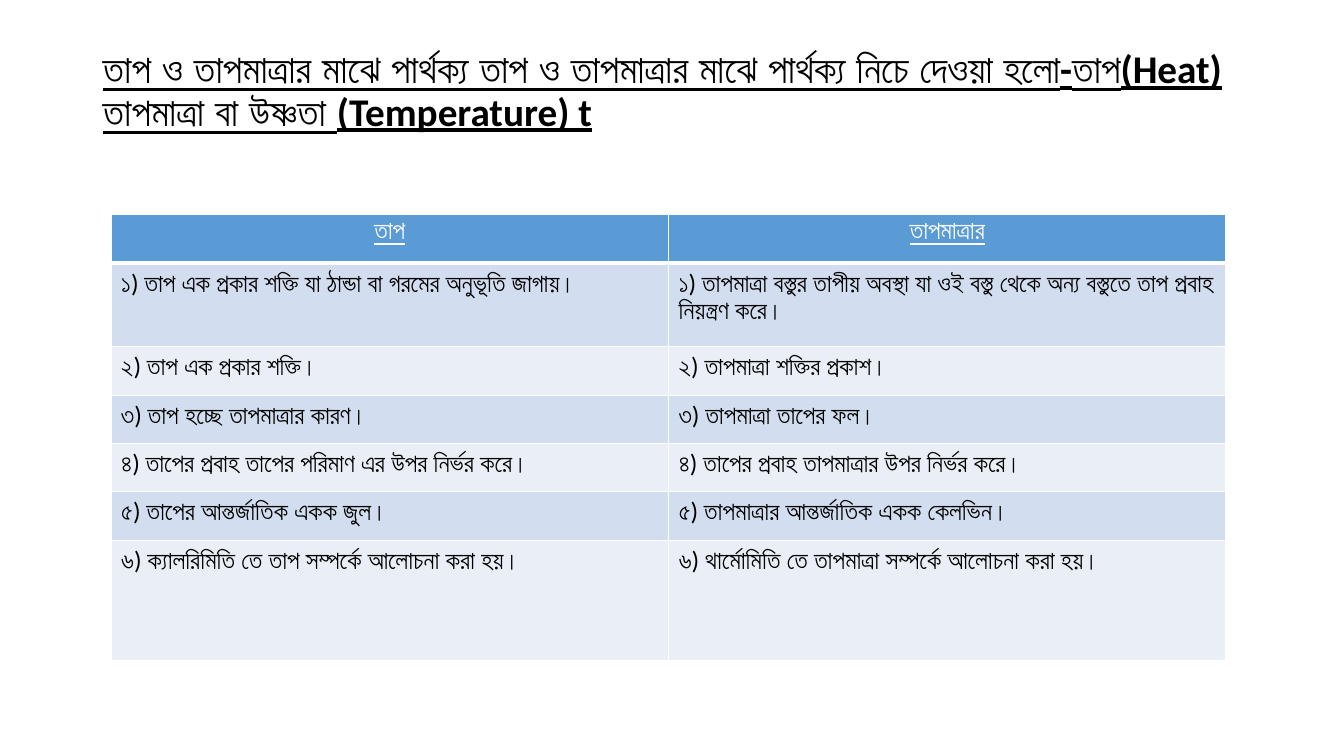
from lxml import etree
from pptx import Presentation
from pptx.dml.color import RGBColor
from pptx.enum.text import MSO_ANCHOR, PP_ALIGN
from pptx.oxml.ns import qn
from pptx.util import Inches, Pt

MIDDLE = MSO_ANCHOR.MIDDLE
LEFT, CENTER = PP_ALIGN.LEFT, PP_ALIGN.CENTER

COLORS = {"ink": "000000", "white": "FFFFFF", "head": "5B9BD5",
          "dark": "D2DEEF", "light": "EAEFF7"}
TITLE = ("তাপ ও তাপমাত্রার মাঝে পার্থক্য তাপ ও তাপমাত্রার মাঝে পার্থক্য "
         "নিচে দেওয়া হলো-তাপ(Heat) তাপমাত্রা বা উষ্ণতা (Temperature) t")
ROWS = [
    ("তাপ", "তাপমাত্রার"),
    ("১) তাপ এক প্রকার শক্তি যা ঠান্ডা বা গরমের অনুভূতি জাগায়।",
     "১) তাপমাত্রা বস্তুর তাপীয় অবস্থা যা ওই বস্তু থেকে অন্য বস্তুতে "
     "তাপ প্রবাহ নিয়ন্ত্রণ করে।"),
    ("২) তাপ এক প্রকার শক্তি।", "২) তাপমাত্রা শক্তির প্রকাশ।"),
    ("৩) তাপ হচ্ছে তাপমাত্রার কারণ।", "৩) তাপমাত্রা তাপের ফল।"),
    ("৪) তাপের প্রবাহ তাপের পরিমাণ এর উপর নির্ভর করে।",
     "৪) তাপের প্রবাহ তাপমাত্রার উপর নির্ভর করে।"),
    ("৫) তাপের আন্তর্জাতিক একক জুল।",
     "৫) তাপমাত্রার আন্তর্জাতিক একক কেলভিন।"),
    ("৬) ক্যালরিমিতি তে তাপ সম্পর্কে আলোচনা করা হয়।",
     "৬) থার্মোমিতি তে তাপমাত্রা সম্পর্কে আলোচনা করা হয়।"),
]
HEIGHTS = [0.48, 0.83, 0.48, 0.48, 0.48, 0.48, 1.19]
HEAVY = {"name": "Calibri", "bold": True, "underline": True}
PLAIN = {"name": "Calibri", "bold": False, "underline": False}


def write(frame, text, size, color, form, align=LEFT):
    para = frame.paragraphs[0]
    para.alignment = align
    run = para.add_run()
    run.text = text
    run.font.size = Pt(size)
    run.font.color.rgb = RGBColor.from_string(COLORS[color])
    for key, value in form.items():
        setattr(run.font, key, value)
    return para


def add_title(slide):
    box = slide.shapes.add_textbox(
        Inches(0.92), Inches(0.4), Inches(11.5), Inches(1.45))
    frame = box.text_frame
    frame.word_wrap = True
    frame.vertical_anchor = MIDDLE
    frame.margin_bottom = Inches(0.47)
    write(frame, TITLE, 28, "ink", HEAVY).line_spacing = 0.9


def add_edges(cell, top, bottom):
    """Draw white cell borders, with top and bottom widths in points."""
    props = cell._tc.get_or_add_tcPr()
    for side, width in (("L", 1), ("R", 1), ("T", top), ("B", bottom)):
        line = etree.SubElement(props, qn(f"a:ln{side}"), w=str(Pt(width)))
        fill = etree.SubElement(line, qn("a:solidFill"))
        etree.SubElement(fill, qn("a:srgbClr"), val=COLORS["white"])


def fill_cell(cell, text, row):
    add_edges(cell, 3 if row == 1 else 1, 3 if row == 0 else 1)
    cell.fill.solid()
    if row == 0:
        shade = "head"
        write(cell.text_frame, text, 18, "white", HEAVY, CENTER)
    else:
        shade = "dark" if row % 2 else "light"
        write(cell.text_frame, text, 18, "ink", PLAIN)
    cell.fill.fore_color.rgb = RGBColor.from_string(COLORS[shade])


def add_grid(slide):
    table = slide.shapes.add_table(
        len(ROWS), 2, Inches(1.1), Inches(2.13),
        Inches(11.06), Inches(sum(HEIGHTS))).table
    for row, (texts, height) in enumerate(zip(ROWS, HEIGHTS)):
        table.rows[row].height = Inches(height)
        for col, text in enumerate(texts):
            fill_cell(table.cell(row, col), text, row)


def main():
    deck = Presentation()
    deck.slide_width, deck.slide_height = Inches(13.33), Inches(7.5)
    slide = deck.slides.add_slide(deck.slide_layouts[6])
    add_title(slide)
    add_grid(slide)
    deck.save("out.pptx")


if __name__ == "__main__":
    main()
